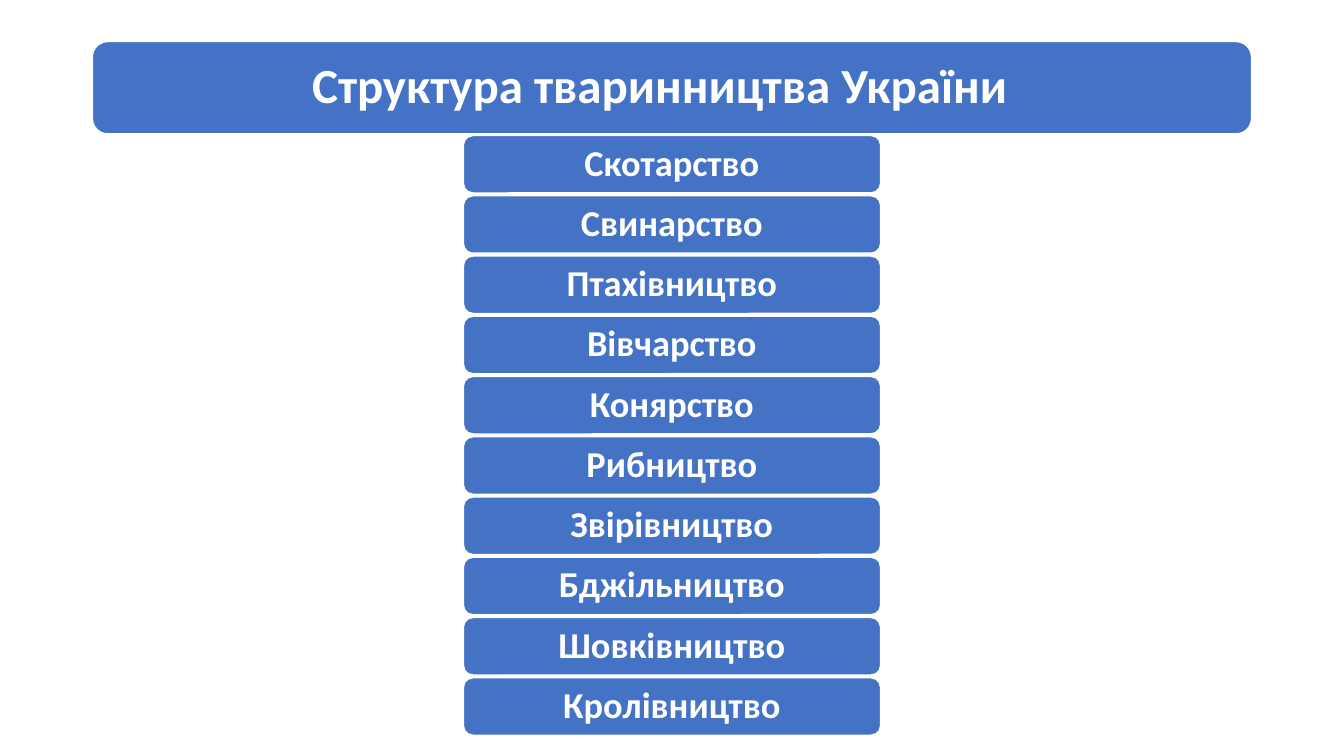
from pptx import Presentation
from pptx import util as u
from pptx.dml import color
from pptx.enum import shapes, text

FONT = "Calibri"
BLUE = "4472C4"
WHITE = "FFFFFF"
BRANCHES = [
    "Скотарство", "Свинарство", "Птахівництво", "Вівчарство", "Конярство",
    "Рибництво", "Звірівництво", "Бджільництво", "Шовківництво", "Кролівництво",
]


def rgb(value):
    return color.RGBColor.from_string(value)


def add_bar(slide, left, top, width, height):
    bar = slide.shapes.add_shape(
        shapes.MSO_SHAPE.ROUNDED_RECTANGLE,
        u.Pt(left), u.Pt(top), u.Pt(width), u.Pt(height))
    bar.shadow.inherit = False
    bar.fill.solid()
    bar.fill.fore_color.rgb = rgb(BLUE)
    bar.line.color.rgb = rgb(WHITE)
    bar.line.width = u.Pt(1)
    return bar


def write_label(shape, label, size, side_inset, edge_inset, right_shift=0):
    frame = shape.text_frame
    frame.text = label
    frame.word_wrap = True
    frame.auto_size = text.MSO_AUTO_SIZE.NONE
    frame.vertical_anchor = text.MSO_ANCHOR.MIDDLE
    frame.margin_left = u.Pt(side_inset)
    frame.margin_right = u.Pt(side_inset + right_shift)
    frame.margin_top = frame.margin_bottom = u.Pt(edge_inset)
    paragraph = frame.paragraphs[0]
    paragraph.alignment = text.PP_ALIGN.CENTER
    paragraph.line_spacing = 0.9
    font = paragraph.runs[0].font
    font.name = FONT
    font.size = u.Pt(size)
    font.bold = True
    font.color.rgb = rgb(WHITE)


# Banner with the slide title on top of it
def build_banner(slide, left, top, width, height):
    banner = add_bar(slide, left, top, width, height)
    title = slide.shapes.title
    title.element.addprevious(banner.element)
    pad = 3.2
    title.left, title.top = u.Pt(left + pad), u.Pt(top + pad)
    title.width, title.height = u.Pt(width - 2 * pad), u.Pt(height - 2 * pad)
    # The title sits slightly left of the banner's centre
    write_label(title, "Структура тваринництва України", 35, 10.5, 10.5, right_shift=17)


# Column of equal bars, one per branch
def build_branches(slide, left, top, width, height):
    gap = 2
    bar_height = (height - gap * (len(BRANCHES) - 1)) / len(BRANCHES)
    for index, branch in enumerate(BRANCHES):
        bar = add_bar(slide, left, top + index * (bar_height + gap), width, bar_height)
        write_label(bar, branch, 26, 9.5, 5.5)


def main():
    presentation = Presentation()
    presentation.slide_width = u.Pt(960)
    presentation.slide_height = u.Pt(540)
    slide = presentation.slides.add_slide(presentation.slide_layouts[5])
    build_banner(slide, 66, 29.7, 828, 66)
    build_branches(slide, 331, 96.8, 298, 428.4)
    presentation.save("out.pptx")


if __name__ == "__main__":
    main()
